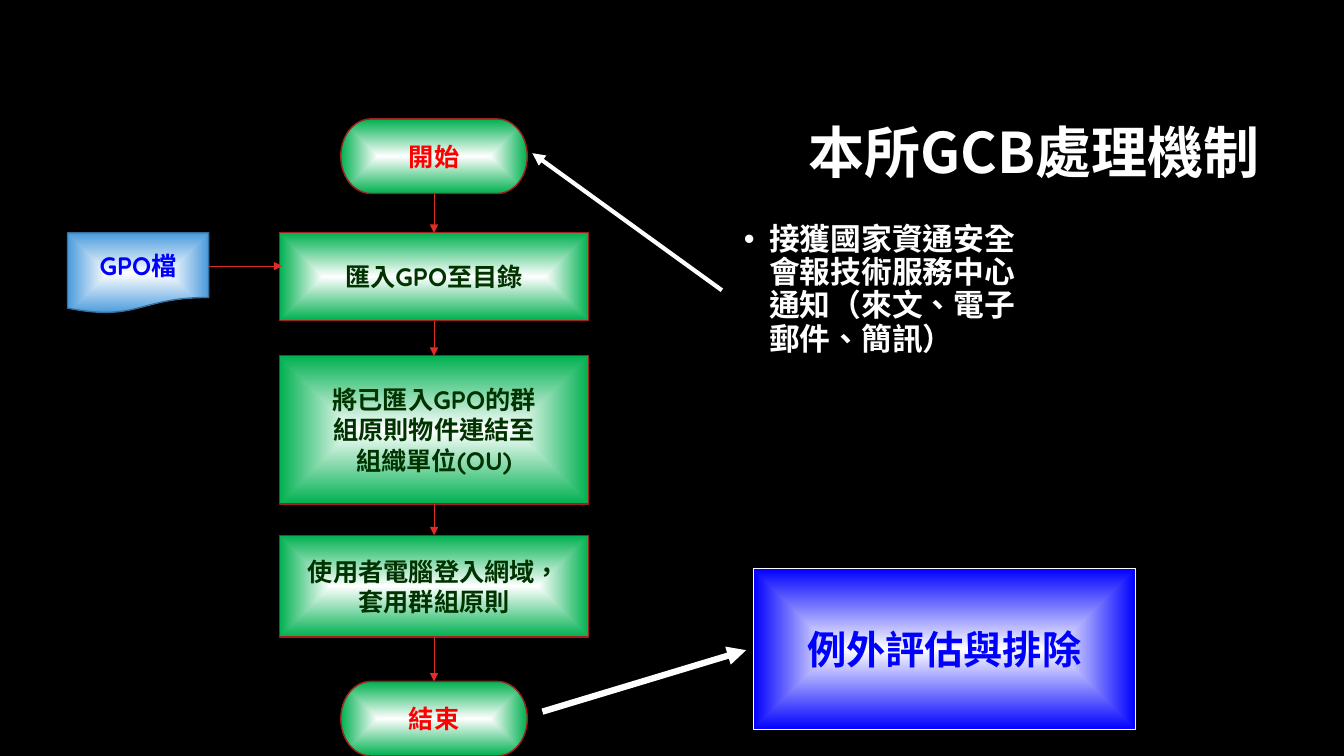
from lxml.etree import SubElement
from pptx import Presentation
from pptx.dml.color import RGBColor
from pptx.enum.lang import MSO_LANGUAGE_ID
from pptx.enum.shapes import MSO_CONNECTOR, MSO_SHAPE
from pptx.enum.text import MSO_ANCHOR, PP_ALIGN
from pptx.oxml.ns import qn
from pptx.util import Inches, Pt

BLACK = RGBColor(0x00, 0x00, 0x00)
WHITE = RGBColor(0xFF, 0xFF, 0xFF)
RED = RGBColor(0xFF, 0x00, 0x00)
BLUE = RGBColor(0x00, 0x00, 0xFF)
GREEN = RGBColor(0x00, 0xB0, 0x50)
DARK_GREEN = RGBColor(0x00, 0x33, 0x00)
DARK_RED = RGBColor(0xA4, 0x1F, 0x1A)
ARROW_RED = RGBColor(0xDF, 0x2E, 0x28)
SKY = RGBColor(0x4A, 0x9B, 0xDC)
DARK_SKY = RGBColor(0x34, 0x71, 0xA1)
CJK_FONT = "Noto Sans CJK SC"
FLOW_FONT = "Quicksand"


def style_paragraph(para, size, color, name, align):
    """Set the bold font, language and alignment of a paragraph."""
    para.alignment = align
    font = para.font
    font.size, font.bold, font.name = Pt(size), True, name
    font.color.rgb = color
    font.language_id = MSO_LANGUAGE_ID.TRADITIONAL_CHINESE
    defaults = para._p.pPr.find(qn("a:defRPr"))
    SubElement(defaults, qn("a:ea"), typeface=CJK_FONT)


def glow_fill(shape, edge, path):
    """Fill a shape with a gradient from a white centre to its edge colour."""
    shape.fill.gradient()
    for stop, color, position in zip(shape.fill.gradient_stops, (WHITE, edge), (0, 1)):
        stop.color.rgb, stop.position = color, position
    gradient = shape._element.spPr.find(qn("a:gradFill"))
    gradient.remove(gradient.find(qn("a:lin")))
    centre = SubElement(gradient, qn("a:path"), path=path)
    SubElement(centre, qn("a:fillToRect"), l="50000", t="50000", r="50000", b="50000")


def add_node(page, kind, box, lines, color, edge=GREEN, border=DARK_RED,
             width=1, size=18, name=FLOW_FONT, path="shape"):
    """Add a glowing shape with centred lines of text."""
    shape = page.shapes.add_shape(kind, *map(Inches, box))
    shape.shadow.inherit = False
    glow_fill(shape, edge, path)
    shape.line.color.rgb, shape.line.width = border, Pt(width)
    frame = shape.text_frame
    frame.word_wrap = True
    frame.vertical_anchor = MSO_ANCHOR.MIDDLE
    frame.text = "\n".join(lines)
    for para in frame.paragraphs:
        style_paragraph(para, size, color, name, PP_ALIGN.CENTER)
    return shape


def add_arrow(page, start, end, color=ARROW_RED, width=0.75):
    """Add a straight arrow between two points."""
    arrow = page.shapes.add_connector(
        MSO_CONNECTOR.STRAIGHT, *map(Inches, (*start, *end)))
    arrow.line.color.rgb, arrow.line.width = color, Pt(width)
    SubElement(arrow.line._get_or_add_ln(), qn("a:tailEnd"), type="triangle")
    SubElement(arrow._element.spPr, qn("a:effectLst"))
    return arrow


def add_text(page, box, text, size, align, anchor, bullet=False):
    """Add a white text box, with a hanging bullet if asked."""
    frame = page.shapes.add_textbox(*map(Inches, box)).text_frame
    frame.word_wrap = True
    frame.vertical_anchor = anchor
    para = frame.paragraphs[0]
    para.text = text
    para.line_spacing = 0.9
    if bullet:
        properties = para._p.get_or_add_pPr()
        properties.set("marL", str(Inches(0.25)))
        properties.set("indent", str(-Inches(0.25)))
        SubElement(properties, qn("a:buFont"), typeface="Arial")
        SubElement(properties, qn("a:buChar"), char="•")
    style_paragraph(para, size, WHITE, CJK_FONT, align)


def build_flow(page, left, top):
    """Draw the flow chart from its start to its end, with the input file."""
    step_width, end_width, end_height = 3.07, 1.85, 0.74
    end_left = left + (step_width - end_width) / 2
    steps = [
        (1.13, 0.87, ["匯入GPO至目錄"]),
        (2.35, 1.47, ["將已匯入GPO的群", "組原則物件連結至", "組織單位(OU)"]),
        (4.13, 1.01, ["使用者電腦登入網域，", "套用群組原則"]),
    ]
    start, end = [
        add_node(page, MSO_SHAPE.FLOWCHART_TERMINATOR,
                 (end_left, top + offset, end_width, end_height), [text], RED)
        for offset, text in ((0, "開始"), (5.58, "結束"))
    ]
    middle = [
        add_node(page, MSO_SHAPE.FLOWCHART_PROCESS,
                 (left, top + offset, step_width, height), lines, DARK_GREEN)
        for offset, height, lines in steps
    ]
    chain = [start, *middle, end]
    for upper, lower in zip(chain, chain[1:]):
        arrow = add_arrow(page, (left, top), (left, top))
        arrow.begin_connect(upper, 2)
        arrow.end_connect(lower, 0)
    add_node(page, MSO_SHAPE.FLOWCHART_DOCUMENT, (left - 2.1, top + 1.13, 1.4, 0.8),
             ["GPO檔"], BLUE, SKY, DARK_SKY, path="rect")
    add_arrow(page, (left - 0.7, top + 1.46), (left + 0.03, top + 1.46))


def build_notes(page, left, top):
    """Draw the notice that starts the flow and the exception box after it."""
    add_text(page, (left, top, 3.07, 1.43),
             "接獲國家資通安全會報技術服務中心通知（來文、電子郵件、簡訊）",
             22, PP_ALIGN.LEFT, MSO_ANCHOR.TOP, bullet=True)
    add_arrow(page, (left - 0.12, top + 0.71), (left - 2, top - 0.65), WHITE, 3)
    add_node(page, MSO_SHAPE.RECTANGLE, (left + 0.19, top + 3.47, 3.79, 1.6),
             ["例外評估與排除"], BLUE, BLUE, WHITE, 0.75, 28, "Arial")
    add_arrow(page, (left - 1.9, top + 4.89), (left + 0.12, top + 4.28), WHITE, 4.5)


def main():
    """Build the slide and save it."""
    deck = Presentation()
    deck.slide_width, deck.slide_height = Inches(13.33), Inches(7.5)
    page = deck.slides.add_slide(deck.slide_layouts[6])
    page.background.fill.solid()
    page.background.fill.fore_color.rgb = BLACK
    add_text(page, (3.17, 0.84, 9.42, 1.41), "本所GCB處理機制",
             40, PP_ALIGN.RIGHT, MSO_ANCHOR.MIDDLE)
    build_flow(page, 2.77, 1.18)
    build_notes(page, 7.28, 2.17)
    deck.save("out.pptx")


if __name__ == "__main__":
    main()
